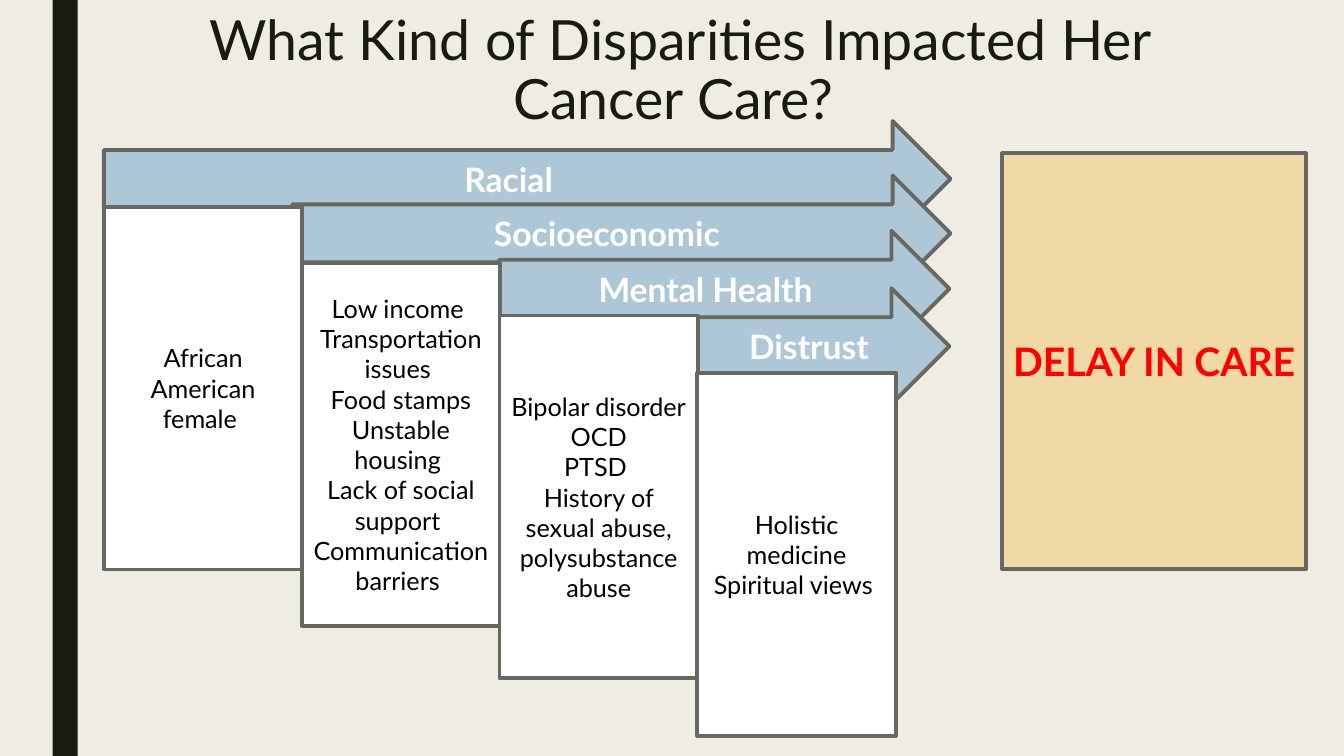
"""Build a slide on the disparities that led to a delay in cancer care."""
import pptx
import pptx.util
import pptx.dml.color
import pptx.enum.shapes
import pptx.enum.text

TITLE = "What Kind of Disparities Impacted Her Cancer Care? "
RESULT = "DELAY IN CARE "
CAUSES = [
    {"name": "Racial ", "left": 74.2, "top": 86.4, "tip": 679,
     "facts": ["African American female "]},
    {"name": "Socioeconomic", "left": 208.8, "top": 125.3, "tip": 679,
     "facts": ["Low income ", "Transportation issues ", "Food stamps",
               "Unstable housing ", "Lack of social support ",
               "Communication barriers "]},
    {"name": "Mental Health ", "left": 356.4, "top": 164.9, "tip": 678.2,
     "facts": ["Bipolar disorder", "OCD", "PTSD ",
               "History of sexual abuse, polysubstance abuse"]},
    {"name": "Distrust", "left": 498.2, "top": 205.9, "tip": 678.2,
     "facts": ["Holistic medicine", "Spiritual views "]},
]
THEME = {
    "font": "Lato", "back": "EFEDE3", "dark": "191B0E", "edge": "686863",
    "arrow": "ADC7D6", "card": "FFFFFF", "sand": "F0D9A5",
    "light": "FFFFFF", "ink": "000000", "alert": "FF0000",
    "title": 39.6, "head": 24, "body": 18, "result": 28, "line": 2.75,
}
ARROW_H = 82.8
CARD_W, CARD_H = 141.8, 259.2
CARD_X, STEP_X = 74.2, 141.3
CARD_TOPS = [147.6, 187.9, 225.4, 266.4]
KINDS = pptx.enum.shapes.MSO_SHAPE
Pt = pptx.util.Pt


def tint(key):
    return pptx.dml.color.RGBColor.from_string(THEME[key])


def write(shape, lines, size, color, bold=False, anchor="MIDDLE", space=None):
    frame = shape.text_frame
    frame.word_wrap = True
    frame.vertical_anchor = pptx.enum.text.MSO_ANCHOR[anchor]
    for i, line in enumerate(lines):
        para = frame.add_paragraph() if i else frame.paragraphs[0]
        para.alignment = pptx.enum.text.PP_ALIGN.CENTER
        para.line_spacing = space
        run = para.add_run()
        run.text = line
        run.font.name = THEME["font"]
        run.font.size = Pt(THEME[size])
        run.font.bold = bold
        run.font.color.rgb = tint(color)


def draw(slide, kind, box, fill, edge="edge"):
    shape = slide.shapes.add_shape(kind, *map(Pt, box))
    shape.shadow.inherit = False
    shape.fill.solid()
    shape.fill.fore_color.rgb = tint(fill)
    if edge:
        shape.line.color.rgb = tint(edge)
        shape.line.width = Pt(THEME["line"])
    else:
        shape.line.fill.background()
    return shape


def main():
    deck = pptx.Presentation()
    deck.slide_width, deck.slide_height = Pt(960), Pt(540)
    slide = deck.slides.add_slide(deck.slide_layouts[6])
    slide.background.fill.solid()
    slide.background.fill.fore_color.rgb = tint("back")
    draw(slide, KINDS.RECTANGLE, (37.5, 0, 18, 540), "dark", None)

    for cause in CAUSES:
        left = cause["left"]
        box = (left, cause["top"], cause["tip"] - left, ARROW_H)
        arrow = draw(slide, KINDS.RIGHT_ARROW, box, "arrow")
        write(arrow, [cause["name"]], "head", "light", True)

    for i, (cause, top) in enumerate(zip(CAUSES, CARD_TOPS)):
        box = (CARD_X + i * STEP_X, top, CARD_W, CARD_H)
        card = draw(slide, KINDS.RECTANGLE, box, "card")
        write(card, cause["facts"], "body", "ink")

    panel = draw(slide, KINDS.RECTANGLE, (715.7, 109.6, 217.4, 296.9), "sand")
    write(panel, [RESULT], "result", "alert", True)

    title = slide.shapes.add_textbox(Pt(108), Pt(5.8), Pt(756), Pt(85))
    write(title, [TITLE], "title", "dark", anchor="TOP", space=0.89)
    deck.save("out.pptx")


if __name__ == "__main__":
    main()
